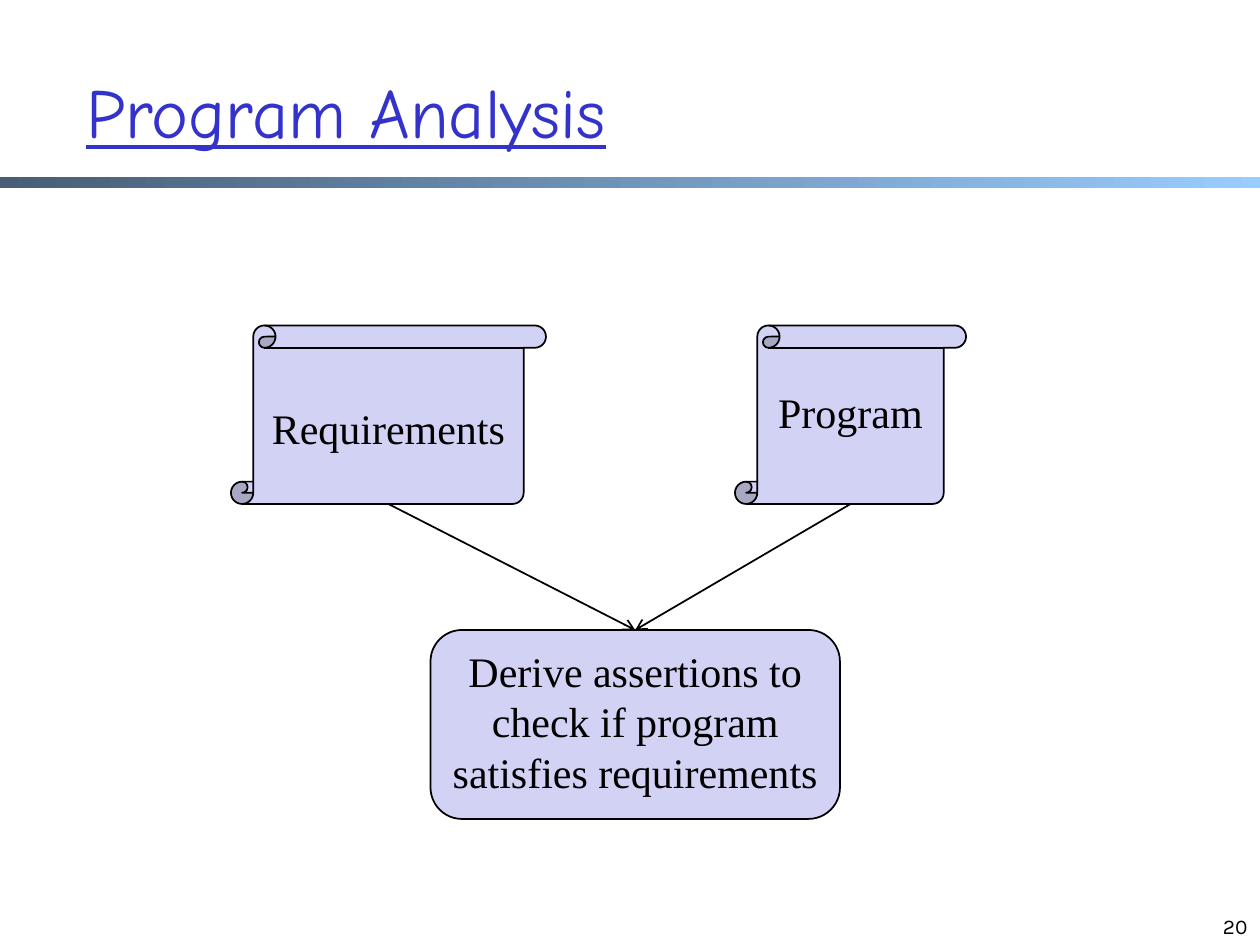
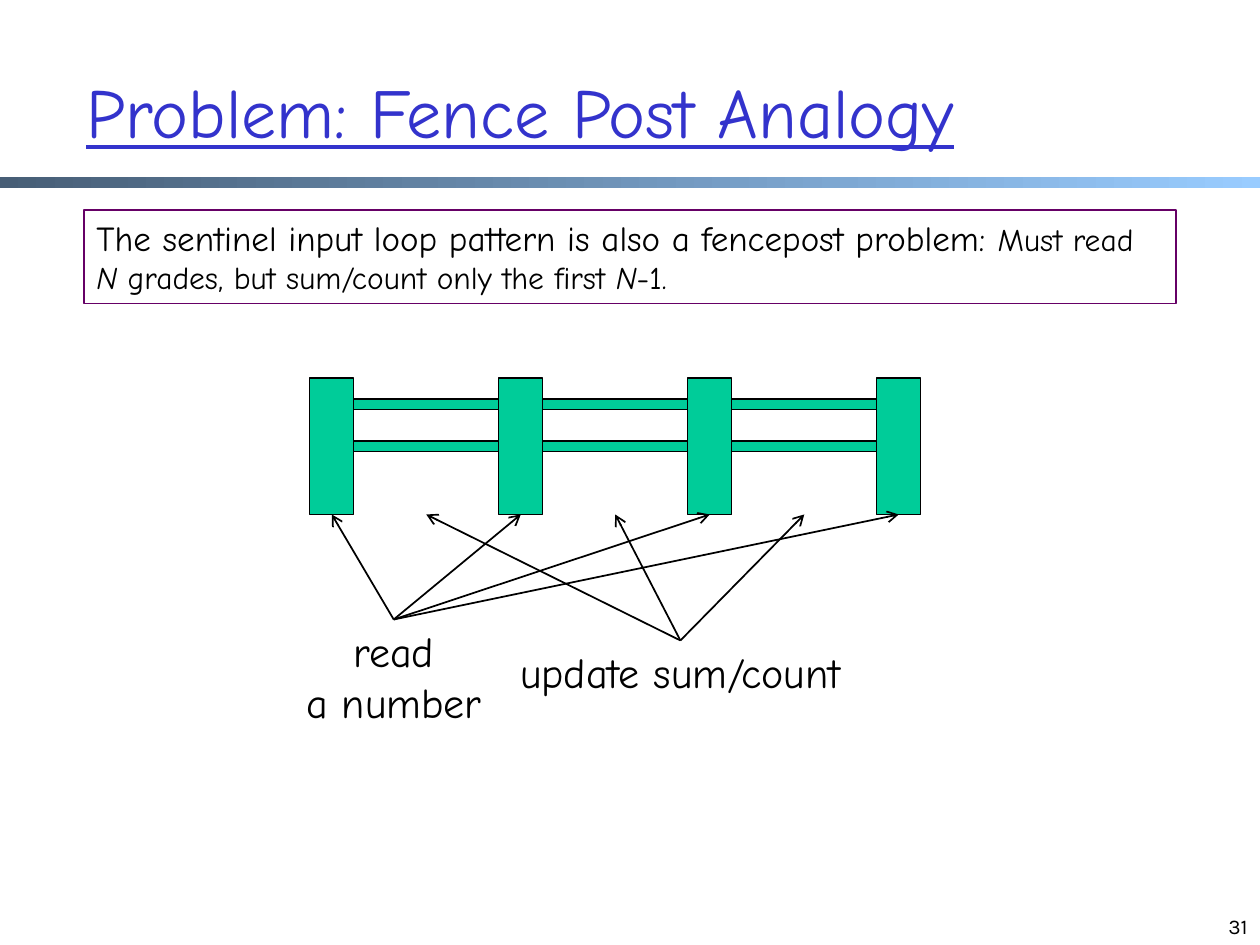
from dataclasses import dataclass

from lxml.etree import SubElement
from pptx import Presentation
from pptx.dml.color import RGBColor as RGB
from pptx.enum.shapes import MSO_CONNECTOR as LINE, MSO_SHAPE as SHAPE
from pptx.enum.text import MSO_ANCHOR as ANCHOR, MSO_AUTO_SIZE as AUTO, PP_ALIGN as ALIGN
from pptx.oxml.ns import qn
from pptx.util import Emu, Pt

PX = 7620  # EMU per px, 120 px to the inch


def px(*lengths):
    return [Emu(n * PX) for n in lengths]


def set_attrs(obj, values):
    for name, value in values.items():
        setattr(obj, name, value)


@dataclass(frozen=True)
class Theme:
    # Colours
    ink: str = "000000"
    title: str = "3333CC"
    band: tuple = ("475E76", "99CCFF")
    node: str = "D2D2F4"
    fence: str = "00CC99"
    frame: str = "660066"
    # Fonts
    hand: str = "Comic Neue"
    serif: str = "Times New Roman"
    sans: str = "Karla"
    # Type sizes
    title_size: int = 40
    label_size: int = 24
    note_size: int = 20
    detail_size: int = 18
    number_size: int = 12
    # Line widths
    line: float = 1
    thin: float = 0.75


class Deck:
    def __init__(self, theme):
        self.theme = theme
        self.prs = Presentation()
        set_attrs(self.prs, dict(zip(("slide_width", "slide_height"), px(1200, 900))))
        self.layout = self.prs.slide_layouts[5]
        self.slide = None

    def add_slide(self, title, number):
        t = self.theme
        first = self.slide is None
        self.slide = self.prs.slides.add_slide(self.layout)
        if first:
            self.share_band()
        sp = self.slide.shapes.title
        self.place(sp, 70, 30, 1020, 150)
        self.set_text(sp, [(title, {"underline": True})], t.hand, t.title_size,
                      color=t.title, align=ALIGN.LEFT, anchor=ANCHOR.MIDDLE)
        self.label(number, (920, 840, 280, 60), t.sans, t.number_size,
                   align=ALIGN.RIGHT, anchor=ANCHOR.BOTTOM)

    def share_band(self):
        """Put the gradient band on the layout, behind its placeholders."""
        band = self.shape(SHAPE.RECTANGLE, (0, 169, 1200, 10))
        band.fill.gradient()
        band.fill.gradient_angle = 0
        for stop, color in zip(band.fill.gradient_stops, self.theme.band):
            stop.color.rgb = RGB.from_string(color)
        self.layout.shapes.element.insert(2, band.element)

    def place(self, sp, *box):
        set_attrs(sp, dict(zip(("left", "top", "width", "height"), px(*box))))

    def shape(self, kind, box, fill=None, line=None, width=1, parent=None):
        sp = (parent or self.slide).shapes.add_shape(kind, *px(*box))
        sp.shadow.inherit = False
        if fill:
            sp.fill.solid()
            sp.fill.fore_color.rgb = RGB.from_string(fill)
        else:
            sp.fill.background()
        if line:
            sp.line.color.rgb = RGB.from_string(line)
            sp.line.width = Pt(width)
        else:
            sp.line.fill.background()
        return sp

    def set_text(self, sp, runs, font, size, color=None, align=ALIGN.CENTER,
                 anchor=ANCHOR.TOP, wrap=True, side=12, top=6):
        """Fill one paragraph from (text, format) runs; newlines break lines."""
        tf = sp.text_frame
        left, upper, lower = px(side, top, 6)
        set_attrs(tf, {"auto_size": AUTO.NONE, "word_wrap": wrap, "vertical_anchor": anchor,
                       "margin_left": left, "margin_right": left,
                       "margin_top": upper, "margin_bottom": lower})
        p = tf.paragraphs[0]
        p.alignment = align
        for text, extra in runs:
            for i, line in enumerate(text.split("\n")):
                if i:
                    p.add_line_break()
                r = p.add_run()
                r.text = line
                set_attrs(r.font, {"name": font, "size": Pt(size), **extra})
                r.font.color.rgb = RGB.from_string(color or self.theme.ink)

    def label(self, text, box, font, size, **style):
        sp = self.slide.shapes.add_textbox(*px(*box))
        self.set_text(sp, [(text, {})], font, size, **style)

    def node(self, kind, box, text, **style):
        t = self.theme
        sp = self.shape(kind, box, t.node, t.ink, t.line)
        self.set_text(sp, [(text, {})], t.serif, t.label_size, **style)

    def arrow(self, start, end):
        t = self.theme
        c = self.slide.shapes.add_connector(LINE.STRAIGHT, *px(*start, *end))
        c.line.color.rgb = RGB.from_string(t.ink)
        c.line.width = Pt(t.line)
        props = c.element.spPr
        SubElement(props.find(qn("a:ln")), qn("a:tailEnd"), type="arrow")
        SubElement(props, qn("a:effectLst"))


def program_analysis(deck):
    deck.add_slide("Program Analysis", "20")
    # Inputs and the step they feed
    deck.node(SHAPE.VERTICAL_SCROLL, (220, 310, 300, 170), "Requirements", top=52)
    deck.node(SHAPE.ROUNDED_RECTANGLE, (410, 600, 390, 180),
              "Derive assertions to check if program satisfies requirements", side=8)
    deck.node(SHAPE.VERTICAL_SCROLL, (700, 310, 220, 170), "Program", top=37)
    for x in (370, 810):
        deck.arrow((x, 480), (605, 600))


def fence_post(deck):
    t = deck.theme
    deck.add_slide("Problem: Fence Post Analogy", "31")

    # Framed statement
    note = deck.shape(SHAPE.RECTANGLE, (80, 200, 1040, 89), None, t.frame, t.thin)
    detail = {"size": Pt(t.detail_size)}
    slanted = {**detail, "italic": True}
    deck.set_text(note, [
        ("The sentinel input loop pattern is also a fencepost problem: ", {}),
        ("Must read ", detail), ("N", slanted),
        (" grades, but sum/count only the first ", detail),
        ("N", slanted), ("-1.", detail),
    ], t.hand, t.note_size, align=ALIGN.LEFT)

    # Fence: posts at an equal pitch, two rails in each gap
    posts, pitch, post_w, left = 4, 180, 42, 295
    fence = deck.slide.shapes.add_group_shape()
    boxes = []
    for i in range(posts):
        x = left + i * pitch
        boxes.append((x, 360, post_w, 130))
        if i < posts - 1:
            boxes += [(x + post_w, y, pitch - post_w, 10) for y in (380, 420)]
    for box in boxes:
        deck.shape(SHAPE.RECTANGLE, box, t.fence, t.ink, t.thin, parent=fence)

    # Labels, each pointing at the posts or at the gaps
    post_x = left + post_w // 2
    for text, box, first_x, count in (
        ("read\na number", (277, 590, 196, 109), post_x, posts),
        ("update sum/count", (468, 610, 360, 60), post_x + pitch // 2, posts - 1),
    ):
        deck.label(text, box, t.hand, t.label_size, wrap=False)
        x, y, w, _ = box
        for i in range(count):
            deck.arrow((x + w // 2, y), (first_x + i * pitch, 490))


def main():
    deck = Deck(Theme())
    program_analysis(deck)
    fence_post(deck)
    deck.prs.save("out.pptx")


if __name__ == "__main__":
    main()
